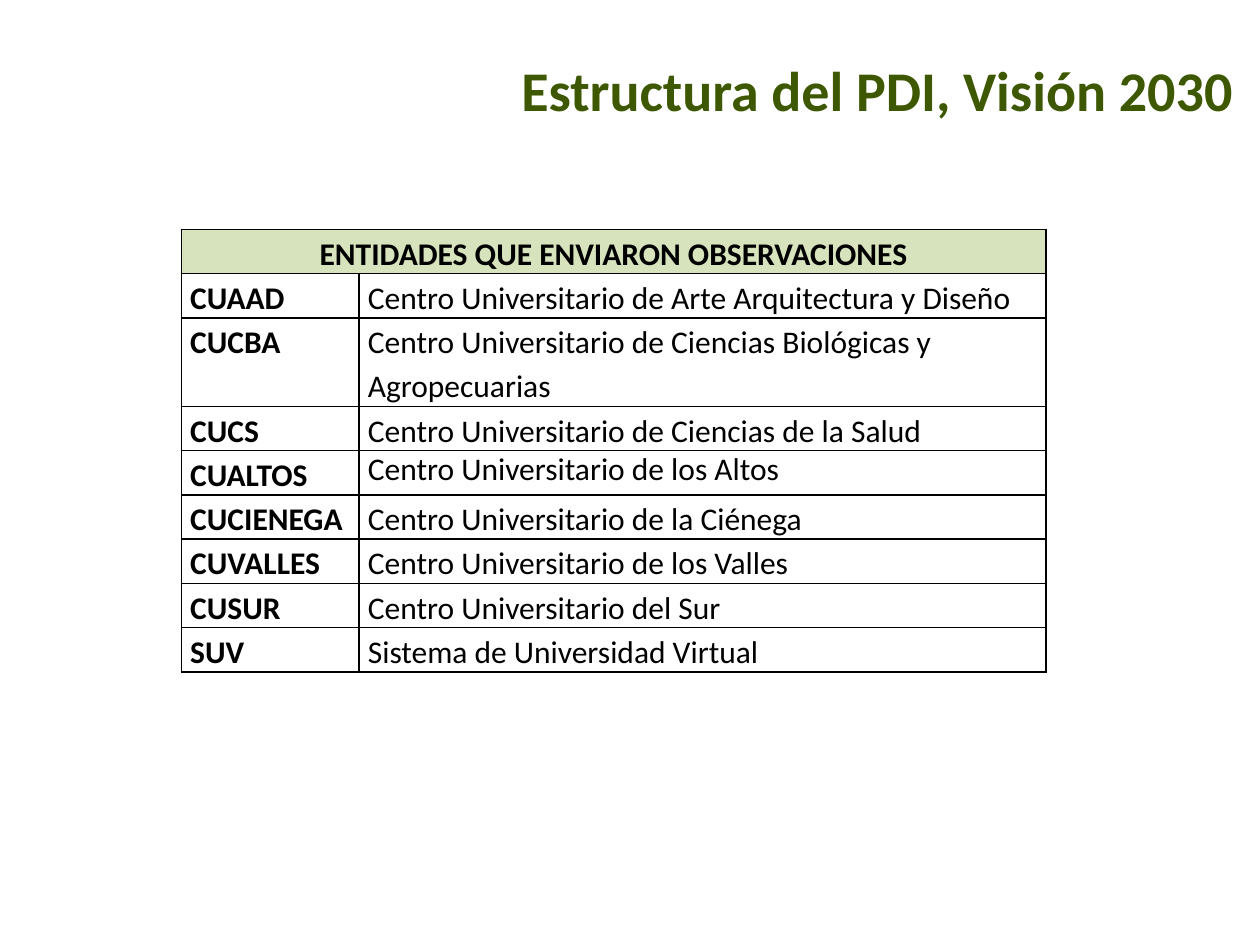
from lxml.etree import SubElement
from pptx import Presentation
from pptx.dml.color import RGBColor
from pptx.enum.text import MSO_ANCHOR, PP_ALIGN
from pptx.oxml.ns import qn
from pptx.util import Inches, Pt

TITLE = "Estructura del PDI, Visión 2030"
HEAD = "ENTIDADES QUE ENVIARON OBSERVACIONES"
ROWS = [
    ("CUAAD", "Centro Universitario de Arte Arquitectura y Diseño"),
    ("CUCBA", "Centro Universitario de Ciencias Biológicas y Agropecuarias"),
    ("CUCS", "Centro Universitario de Ciencias de la Salud"),
    ("CUALTOS", "Centro Universitario de los Altos"),
    ("CUCIENEGA", "Centro Universitario de la Ciénega"),
    ("CUVALLES", "Centro Universitario de los Valles"),
    ("CUSUR", "Centro Universitario del Sur"),
    ("SUV", "Sistema de Universidad Virtual"),
]
SINGLE = "Centro Universitario de los Altos"
WIDTHS = (1.41, 5.45)
ROW_H = 0.35
FONT = "Calibri"
GREEN = RGBColor(0x3D, 0x58, 0x00)
PALE = RGBColor(0xD6, 0xE3, 0xBC)
BLACK = RGBColor(0, 0, 0)


def style(para, size, color, bold):
    font = para.runs[0].font
    font.name, font.size, font.bold = FONT, Pt(size), bold
    font.color.rgb = color


def border(cell):
    props = cell._tc.get_or_add_tcPr()
    for side in ("lnL", "lnR", "lnT", "lnB"):
        line = SubElement(props, qn(f"a:{side}"), w=str(Pt(1)))
        fill = SubElement(line, qn("a:solidFill"))
        SubElement(fill, qn("a:srgbClr"), val=str(BLACK))


def write(cell, text, bold):
    cell.text_frame.text = text
    para = cell.text_frame.paragraphs[0]
    if text != SINGLE:
        para.line_spacing = 1.15
    style(para, 18, BLACK, bold)


def add_title(slide):
    title = slide.shapes.title
    title.left, title.top = Inches(2.33), Inches(0.44)
    title.width, title.height = Inches(7.56), Inches(0.54)
    frame = title.text_frame
    frame.text = TITLE
    frame.word_wrap = True
    frame.vertical_anchor = MSO_ANCHOR.MIDDLE
    para = frame.paragraphs[0]
    para.alignment = PP_ALIGN.RIGHT
    style(para, 32, GREEN, True)


def add_grid(slide):
    count = len(ROWS) + 1
    table = slide.shapes.add_table(
        count, len(WIDTHS), Inches(1.44), Inches(1.82),
        Inches(sum(WIDTHS)), Inches(ROW_H * count)).table
    for col, width in zip(table.columns, WIDTHS):
        col.width = Inches(width)
    for row in table.rows:
        row.height = Inches(ROW_H)
    for cell in table.iter_cells():
        cell.margin_left = cell.margin_right = Inches(0.07)
        cell.margin_top = cell.margin_bottom = 0
        border(cell)
        cell.fill.background()
    head = table.cell(0, 0)
    head.merge(table.cell(0, 1))
    write(head, HEAD, True)
    head.text_frame.paragraphs[0].alignment = PP_ALIGN.CENTER
    head.fill.solid()
    head.fill.fore_color.rgb = PALE
    for r, (code, name) in enumerate(ROWS, 1):
        write(table.cell(r, 0), code, True)
        write(table.cell(r, 1), name, False)


def main():
    deck = Presentation()
    deck.slide_width, deck.slide_height = Inches(10), Inches(7.5)
    slide = deck.slides.add_slide(deck.slide_layouts[5])
    add_title(slide)
    add_grid(slide)
    deck.save("out.pptx")


if __name__ == "__main__":
    main()
